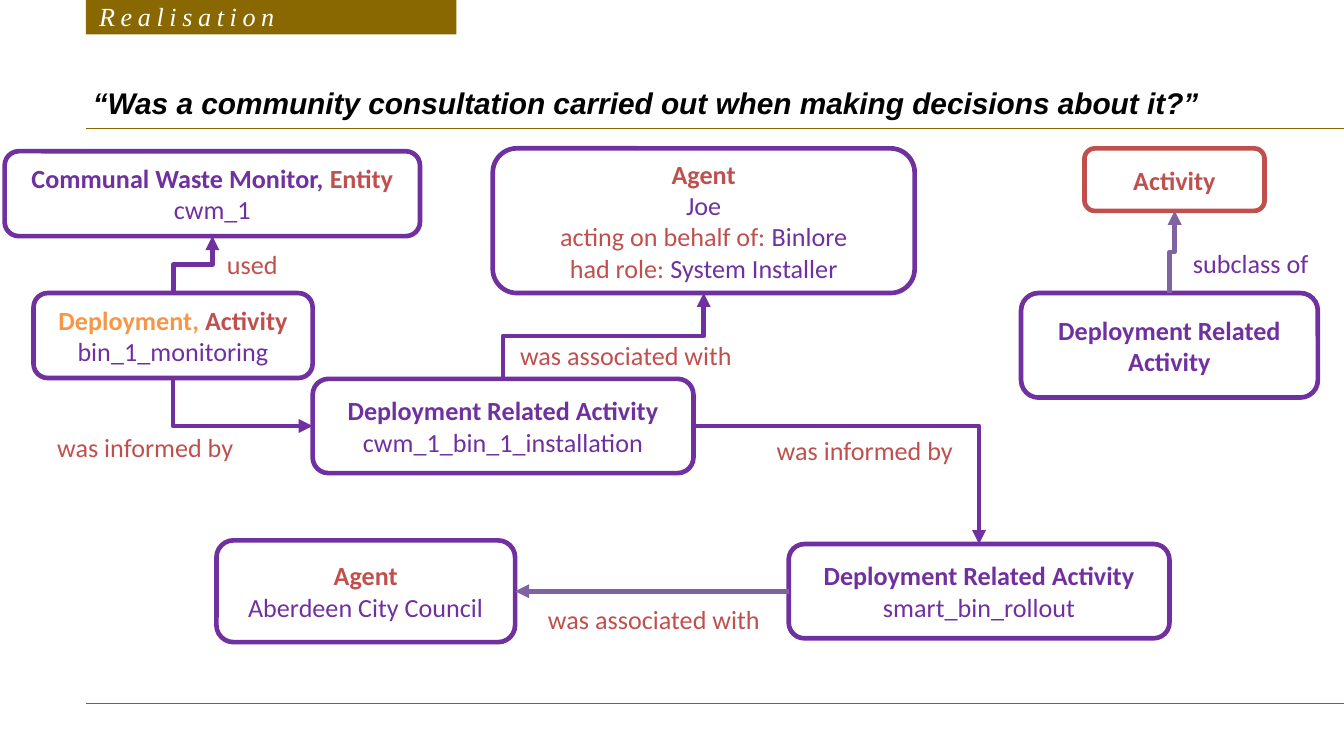
from dataclasses import dataclass

from lxml.etree import SubElement
from pptx import Presentation
from pptx.dml.color import RGBColor
from pptx.enum.shapes import MSO_CONNECTOR as Link, MSO_SHAPE as Shape
from pptx.enum.text import MSO_ANCHOR as Anchor, MSO_AUTO_SIZE as AutoSize, PP_ALIGN as Align
from pptx.oxml.ns import qn
from pptx.util import Pt


@dataclass(frozen=True)
class Theme:
    gold: str = "896701"
    purple: str = "7030A0"
    violet: str = "8064A2"
    red: str = "C0504D"
    orange: str = "F79646"
    white: str = "FFFFFF"
    black: str = "000000"
    title_size: float = 16
    text_size: float = 14
    rule_width: float = 0.75
    stroke: float = 2.5
    title_font: str = "Arial"
    tag_font: str = "Times New Roman"
    body_font: str = "Calibri"


THEME = Theme()


class Diagram:
    def __init__(self, slide, theme):
        self.slide = slide
        self.theme = theme

    def format_run(self, span, color, **formats):
        values = {"name": self.theme.body_font, "size": Pt(self.theme.text_size), **formats}
        for name, value in values.items():
            setattr(span.font, name, value)
        span.font.color.rgb = RGBColor.from_string(color)

    def format_frame(self, frame, **formats):
        values = {"word_wrap": True, "auto_size": AutoSize.NONE,
                  "vertical_anchor": Anchor.MIDDLE, **formats}
        for name, value in values.items():
            setattr(frame, name, value)

    def add_text(self, para, text, color, align=Align.LEFT, **formats):
        para.alignment = align
        span = para.add_run()
        span.text = text
        self.format_run(span, color, **formats)
        return span

    def title(self, text, left, top, width, height):
        title = self.slide.shapes.title
        for name, value in {"left": left, "top": top, "width": width, "height": height}.items():
            setattr(title, name, Pt(value))
        self.format_frame(title.text_frame)
        self.add_text(title.text_frame.paragraphs[0], text, self.theme.black,
                      name=self.theme.title_font, size=Pt(self.theme.title_size),
                      bold=True, italic=True)

    def shape(self, kind, place, fill, line=None):
        shape = self.slide.shapes.add_shape(kind, *map(Pt, place))
        shape.shadow.inherit = False
        shape.fill.solid()
        shape.fill.fore_color.rgb = RGBColor.from_string(fill)
        if line:
            shape.line.color.rgb = RGBColor.from_string(line)
            shape.line.width = Pt(self.theme.stroke)
        else:
            shape.line.fill.background()
        self.format_frame(shape.text_frame)
        return shape

    def tag(self, text, *place):
        shape = self.shape(Shape.RECTANGLE, place, self.theme.gold)
        span = self.add_text(shape.text_frame.paragraphs[0], text, self.theme.white,
                             name=self.theme.tag_font, italic=True)
        span.font._element.set("spc", "300")

    def node(self, place, lines, line=THEME.purple):
        """Draw a rounded box; each line is a list of (text, color), the first one bold."""
        box = self.shape(Shape.ROUNDED_RECTANGLE, place, self.theme.white, line)
        frame = box.text_frame
        for index, parts in enumerate(lines):
            para = frame.add_paragraph() if index else frame.paragraphs[0]
            for text, color in parts:
                self.add_text(para, text, color, Align.CENTER, bold=index == 0)
        return box

    def label(self, text, left, top, width, color=THEME.red, wrap=True):
        box = self.slide.shapes.add_textbox(Pt(left), Pt(top), Pt(width), Pt(24.5))
        self.format_frame(box.text_frame, word_wrap=wrap, vertical_anchor=Anchor.TOP)
        self.add_text(box.text_frame.paragraphs[0], text, color)

    def connector(self, kind, start, end, color, width):
        connector = self.slide.shapes.add_connector(kind, *start, *end)
        connector.line.color.rgb = RGBColor.from_string(color)
        connector.line.width = Pt(width)
        SubElement(connector._element.spPr, qn("a:effectLst"))
        return connector

    def rule(self, top):
        self.connector(Link.STRAIGHT, (Pt(46), Pt(top)), (Pt(720), Pt(top)),
                       self.theme.gold, self.theme.rule_width)

    def arrow(self, start, end, color=THEME.purple, kind=Link.ELBOW, upright=False, corner=False):
        """Join two points; upright leaves vertically, corner bends only once."""
        if upright:
            # A quarter turn makes the preset's horizontal first leg vertical.
            mid_x, mid_y = ((a + b) // 2 for a, b in zip(start, end))
            start, end = ((mid_x + y - mid_y, mid_y - x + mid_x) for x, y in (start, end))
        connector = self.connector(kind, start, end, color, self.theme.stroke)
        properties = connector._element.spPr
        if upright:
            properties.find(qn("a:xfrm")).set("rot", str(90 * 60000))
        if corner:
            properties.find(qn("a:prstGeom")).set("prst", "bentConnector2")
        SubElement(properties.find(qn("a:ln")), qn("a:tailEnd"), type="triangle")


def side(box, across, down):
    """Give a point on a box as fractions of its width and height."""
    return box.left + int(box.width * across), box.top + int(box.height * down)


TOP, BOTTOM, LEFT, RIGHT = (0.5, 0), (0.5, 1), (0, 0.5), (1, 0.5)


def main():
    deck = Presentation()
    deck.slide_width, deck.slide_height = Pt(720), Pt(405)
    page = Diagram(deck.slides.add_slide(deck.slide_layouts[5]), THEME)
    purple, red = THEME.purple, THEME.red

    page.rule(69)
    page.rule(377)
    page.title("“Was a community consultation carried out when making decisions about it?”",
               42.5, 38, 641.5, 34)
    page.tag("Realisation", 46, -1.5, 198.5, 20)

    related = ("Deployment Related Activity", purple)
    monitoring = page.node((18, 157, 149.5, 45.5), [
        [("Deployment, ", THEME.orange), ("Activity", red)], [("bin_1_monitoring", purple)]])
    subclass = page.node((547, 157, 159, 56), [[related]])
    activity = page.node((581, 79.5, 96.5, 33.5), [[("Activity", red)]], red)
    installation = page.node((167.5, 203, 204, 50.5), [
        [related], [("cwm_1_bin_1_installation", purple)]])
    rollout = page.node((422.5, 291.5, 204, 50.5), [[related], [("smart_bin_rollout", purple)]])
    installer = page.node((264, 79.5, 226, 77.5), [
        [("Agent", red)], [("Joe", purple)],
        [("acting on behalf of: ", red), ("Binlore", purple)],
        [("had role: ", red), ("System Installer", purple)]])
    council = page.node((116, 289.5, 160, 54.5), [
        [("Agent", red)], [("Aberdeen City Council", purple)]])
    monitor = page.node((2.5, 81, 222.5, 45.5), [
        [("Communal Waste Monitor, ", purple), ("Entity", red)], [("cwm_1", purple)]])

    page.arrow(side(subclass, *TOP), side(activity, *BOTTOM), THEME.violet, upright=True)
    page.arrow(side(monitoring, *TOP), side(monitor, *BOTTOM), upright=True)
    page.arrow(side(installation, *TOP), side(installer, *BOTTOM), upright=True)
    page.arrow(side(monitoring, *BOTTOM), side(installation, *LEFT), upright=True, corner=True)
    page.arrow(side(installation, *RIGHT), side(rollout, *TOP), corner=True)
    page.arrow(side(rollout, *LEFT), side(council, *RIGHT), THEME.violet, Link.STRAIGHT)

    page.label("subclass of", 632, 129, 77, purple, wrap=False)
    page.label("used", 114.5, 129.5, 115)
    for left, top, width in ((286.5, 319.5, 133), (271.5, 178.5, 157)):
        page.label("was associated with", left, top, width)
    for left, top in ((23.5, 227.5), (409, 229)):
        page.label("was informed by", left, top, 115)

    deck.save("out.pptx")


if __name__ == "__main__":
    main()
